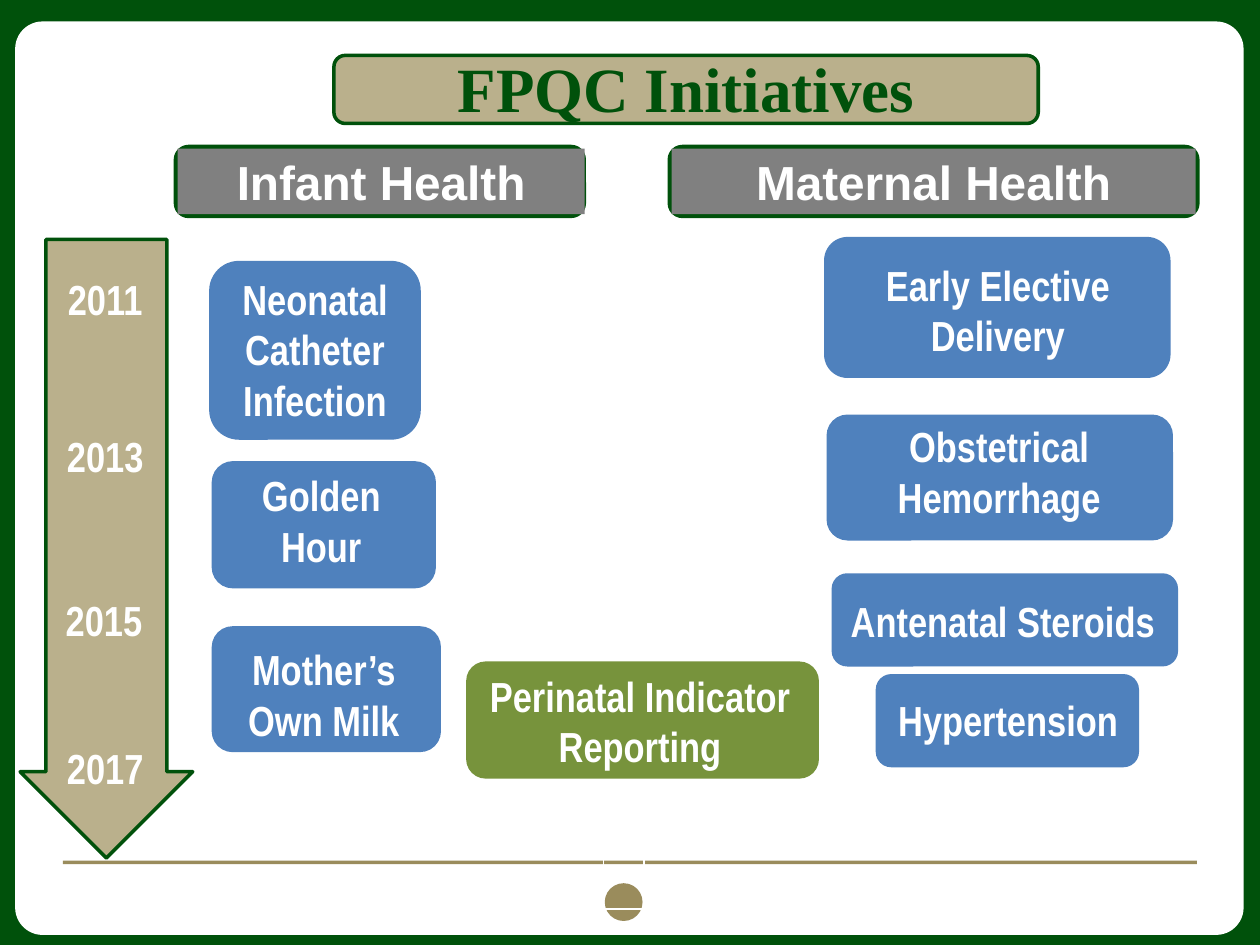
"""Build the FPQC Initiatives timeline slide."""
from dataclasses import dataclass

from lxml import etree
from pptx import Presentation
from pptx.dml.color import RGBColor
from pptx.enum.shapes import MSO_SHAPE
from pptx.enum.text import MSO_ANCHOR, MSO_AUTO_SIZE, PP_ALIGN
from pptx.oxml.ns import qn
from pptx.shapes.autoshape import Shape
from pptx.slide import Slide
from pptx.text.text import TextFrame
from pptx.util import Inches, Pt

ROUNDED = MSO_SHAPE.ROUNDED_RECTANGLE
RECTANGLE = MSO_SHAPE.RECTANGLE
OVAL = MSO_SHAPE.OVAL
DOWN_ARROW = MSO_SHAPE.DOWN_ARROW
MIDDLE = MSO_ANCHOR.MIDDLE
CENTER = PP_ALIGN.CENTER
GROW = MSO_AUTO_SIZE.SHAPE_TO_FIT_TEXT
NO_FIT = MSO_AUTO_SIZE.NONE

GREEN = RGBColor(0x00, 0x51, 0x0B)
WHITE = RGBColor(0xFF, 0xFF, 0xFF)
GOLD = RGBColor(0x9A, 0x8C, 0x5C)
SAND = RGBColor(0xBA, 0xB0, 0x8C)
LIGHT_GRAY = RGBColor(0xA6, 0xA6, 0xA6)
GRAY = RGBColor(0x80, 0x80, 0x80)
BLUE = RGBColor(0x4F, 0x81, 0xBD)
OLIVE = RGBColor(0x77, 0x93, 0x3C)


@dataclass(frozen=True)
class Area:
    left: float
    top: float
    width: float
    height: float

    def lengths(self) -> tuple[int, int, int, int]:
        return (Inches(self.left), Inches(self.top),
                Inches(self.width), Inches(self.height))


@dataclass(frozen=True)
class Header:
    text: str
    frame: Area
    panel: Area


@dataclass(frozen=True)
class Card:
    text: str
    area: Area
    caption: Area
    color: RGBColor = BLUE


HEADERS = (
    Header("Maternal Health", Area(5.33, 1.18, 4.16, 0.52), Area(5.33, 1.18, 4.16, 0.52)),
    Header("Infant Health", Area(1.41, 1.18, 3.21, 0.52), Area(1.41, 1.18, 3.23, 0.52)),
)
CARDS = (
    Card("Neonatal Catheter Infection", Area(1.66, 2.07, 1.68, 1.42), Area(1.68, 2.12, 1.64, 1.31)),
    Card("Golden Hour", Area(1.68, 3.66, 1.78, 1.01), Area(1.72, 3.68, 1.66, 0.91)),
    Card("Early Elective Delivery", Area(6.54, 1.88, 2.75, 1.12), Area(6.59, 2.01, 2.66, 0.91)),
    Card("Mother’s Own Milk", Area(1.68, 4.97, 1.82, 1), Area(1.72, 5.06, 1.7, 0.91)),
    Card("Obstetrical Hemorrhage", Area(6.56, 3.29, 2.75, 1), Area(6.6, 3.29, 2.66, 0.91)),
    Card("Hypertension", Area(6.95, 5.35, 2.09, 0.74), Area(6.99, 5.46, 2.02, 0.5)),
    Card("Antenatal Steroids", Area(6.6, 4.55, 2.75, 0.74), Area(6.63, 4.68, 2.66, 0.5)),
    Card("Perinatal Indicator Reporting", Area(3.7, 5.25, 2.8, 0.93),
         Area(3.75, 5.27, 2.66, 0.91), OLIVE),
)
YEARS = {
    "2011": Area(0.35, 2.12, 0.97, 0.5),
    "2015": Area(0.34, 4.67, 0.97, 0.5),
    "2013": Area(0.35, 3.37, 0.97, 0.5),
    "2017": Area(0.35, 5.84, 0.97, 0.5),
}


def add_panel(page: Slide, kind: MSO_SHAPE, area: Area, fill: RGBColor,
              line_width: float = 0) -> Shape:
    panel = page.shapes.add_shape(kind, *area.lengths())
    panel.shadow.inherit = False
    panel.fill.solid()
    panel.fill.fore_color.rgb = fill
    if line_width:
        panel.line.color.rgb = GREEN
        panel.line.width = Pt(line_width)
    else:
        panel.line.fill.background()
    return panel


def write(frame: TextFrame, text: str, font: str, size: float, color: RGBColor) -> None:
    frame.word_wrap = True
    para = frame.paragraphs[0]
    para.alignment = CENTER
    span = para.add_run()
    span.text = text
    span.font.name = font
    span.font.size = Pt(size)
    span.font.bold = True
    span.font.color.rgb = color


def add_caption(page: Slide, text: str, area: Area) -> None:
    box = page.shapes.add_textbox(*area.lengths())
    write(box.text_frame, text, "Arial Narrow", 24, WHITE)
    box.text_frame.auto_size = GROW


def add_title(page: Slide) -> None:
    add_panel(page, ROUNDED, Area(2.65, 0.44, 5.59, 0.54), SAND, 2)
    title = page.shapes.title
    title.left, title.top, title.width, title.height = Area(2.65, 0.46, 5.59, 0.46).lengths()
    write(title.text_frame, "FPQC Initiatives", "Times New Roman", 36, GREEN)
    title.text_frame.vertical_anchor = MIDDLE
    title.text_frame.auto_size = NO_FIT
    title.element.getparent().append(title.element)


def add_empty_table(page: Slide, area: Area) -> None:
    table = page.shapes.add_table(1, 1, *area.lengths()).table
    table.first_row = table.horz_banding = False
    cell = table.cell(0, 0)
    properties = cell._tc.get_or_add_tcPr()
    for side in ("a:lnL", "a:lnR", "a:lnT", "a:lnB"):
        border = etree.SubElement(properties, qn(side), w=str(Pt(1)))
        fill = etree.SubElement(border, qn("a:solidFill"))
        etree.SubElement(fill, qn("a:srgbClr"), val=str(WHITE))
    cell.fill.background()


def main() -> None:
    deck = Presentation()
    deck.slide_width, deck.slide_height = Inches(10), Inches(7.5)
    page = deck.slides.add_slide(deck.slide_layouts[5])
    page.background.fill.solid()
    page.background.fill.fore_color.rgb = GREEN

    sheet = add_panel(page, ROUNDED, Area(0.12, 0.17, 9.75, 7.25), WHITE)
    sheet.adjustments[0] = 0.03
    add_panel(page, OVAL, Area(4.8, 7.01, 0.3, 0.3), GOLD)
    add_panel(page, RECTANGLE, Area(0.5, 6.83, 9, 0.03), GOLD)

    for header in HEADERS:
        add_panel(page, ROUNDED, header.frame, LIGHT_GRAY, 4.5)
        panel = add_panel(page, RECTANGLE, header.panel, GRAY)
        write(panel.text_frame, header.text, "Arial", 27.3, WHITE)
        panel.text_frame.vertical_anchor = MIDDLE
    add_title(page)

    arrow = add_panel(page, DOWN_ARROW, Area(0.16, 1.9, 1.37, 4.91), SAND, 2)
    arrow.adjustments[0], arrow.adjustments[1] = 0.7, 0.5
    add_empty_table(page, Area(4.79, 6.81, 0.32, 0.4))

    for card in CARDS:
        add_panel(page, ROUNDED, card.area, card.color)
        add_caption(page, card.text, card.caption)
    for year, area in YEARS.items():
        add_caption(page, year, area)
    deck.save("out.pptx")


if __name__ == "__main__":
    main()
